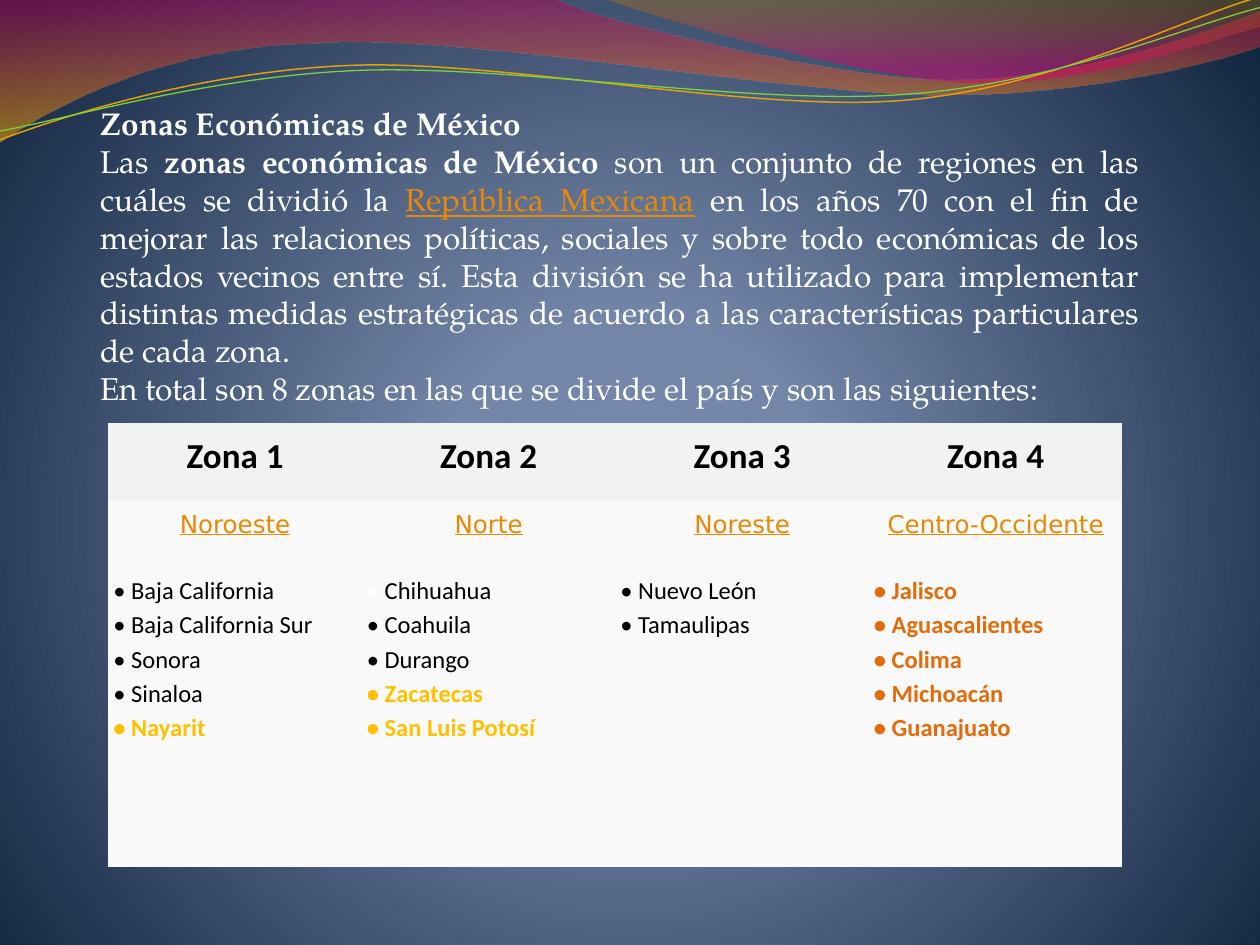
from lxml import etree
from pptx import Presentation
from pptx.dml.color import RGBColor
from pptx.enum.text import PP_ALIGN
from pptx.oxml.ns import qn
from pptx.util import Inches, Pt

CENTER, JUSTIFY = PP_ALIGN.CENTER, PP_ALIGN.JUSTIFY

WHITE = RGBColor(0xFF, 0xFF, 0xFF)
BLACK = RGBColor(0, 0, 0)
LINK = RGBColor(0xEB, 0x88, 0x03)
AMBER = RGBColor(0xFF, 0xC0, 0x00)
RUST = RGBColor(0xE3, 0x6C, 0x0A)
PALE = RGBColor(0xF9, 0xF9, 0xF9)
GREY = RGBColor(0xF2, 0xF2, 0xF2)
GOLD = RGBColor(0xE0, 0xA2, 0x09)
GREEN = RGBColor(0x7F, 0xD1, 0x3B)
PINK = RGBColor(0xBD, 0x00, 0x59)
ROSE = RGBColor(0xE1, 0x00, 0x6B)
ORANGE = RGBColor(0xF0, 0xAB, 0x00)
BROWN = RGBColor(0xC3, 0x8B, 0x00)
SKY = RGBColor(0x76, 0x8B, 0xB1)
STEEL = RGBColor(0x73, 0x86, 0xA7)
NAVY = RGBColor(0x12, 0x25, 0x41)

SERIF, SANS, WIDE = "TeX Gyre Pagella", "Calibri", "DejaVu Sans"
NO_GRID = "{2D5ABB26-0587-4C30-8999-92F81FD0307C}"

BANDS = [
    ([(0, 0), (4.4, -0.01),
      (4.76, 0.17, 6.64, 0.63, 7.58, 0.63), (8.53, 0.63, 9.58, 0.26, 10, 0.09),
      (10.01, 0.36),
      (9.83, 0.44, 8.7, 0.76, 7.46, 0.75), (6.22, 0.75, 3.82, 0.28, 2.57, 0.34),
      (1.29, 0.36, 0.46, 0.83, -0.01, 1.13), (0, 0)],
     [(0, PINK, 45), (100, ORANGE, 55)]),
    ([(4.79, -0.01),
      (5.09, 0.11, 6.82, 0.62, 7.69, 0.65), (8.56, 0.69, 9.61, 0.32, 10, 0.21),
      (10, 0), (4.79, -0.01)],
     [(0, BROWN, 30), (80, ROSE, 45)]),
]
WAVES = [
    ([(0, 1.11), (0.48, 0.93, 1.58, 0.57, 2.77, 0.52),
      (3.95, 0.47, 5.93, 0.89, 7.13, 0.8), (8.33, 0.71, 9.38, 0.15, 9.98, -0.02)],
     GOLD, 0.85),
    ([(0, 1.04), (0.47, 0.96, 1.64, 0.61, 2.83, 0.56),
      (4.03, 0.51, 5.97, 0.84, 7.17, 0.75), (8.36, 0.67, 9.41, 0.21, 10, 0.06)],
     GREEN, 0.75),
]
INTRO = [
    (None, [("Zonas Económicas de México", WHITE, True)]),
    (JUSTIFY, [
        ("Las ", WHITE, False),
        ("zonas económicas de México", WHITE, True),
        (" son un conjunto de regiones en las cuáles se dividió la ", WHITE, False),
        ("República Mexicana", LINK, False),
        (" en los años 70 con el fin de mejorar las relaciones políticas, "
         "sociales y sobre todo económicas de los estados vecinos entre sí. "
         "Esta división se ha utilizado para implementar distintas medidas "
         "estratégicas de acuerdo a las características particulares de cada "
         "zona.", WHITE, False)]),
    (None, [("En total son 8 zonas en las que se divide el país y son las "
             "siguientes:", WHITE, False)]),
]
ZONES = [
    ("Zona 1", "Noroeste",
     [("• Baja California\n• Baja California Sur\n• Sonora\n• Sinaloa\n", BLACK, False),
      ("• Nayarit", AMBER, True)]),
    ("Zona 2", "Norte",
     [("• ", WHITE, False), ("Chihuahua\n• Coahuila\n• Durango\n", BLACK, False),
      ("• Zacatecas\n• San Luis Potosí", AMBER, True)]),
    ("Zona 3", "Noreste", [("• Nuevo León\n• Tamaulipas", BLACK, False)]),
    ("Zona 4", "Centro-Occidente",
     [("• Jalisco\n• Aguascalientes\n• Colima\n• Michoacán\n• Guanajuato", RUST, True)]),
]


def set_grad(fill, root, stops, shade):
    fill.gradient()
    grad = root.xpath(".//a:gradFill")[0]
    for child in list(grad):
        grad.remove(child)
    group = etree.SubElement(grad, qn("a:gsLst"))
    for pos, color, alpha in stops:
        stop = etree.SubElement(group, qn("a:gs"), pos=str(pos * 1000))
        tint = etree.SubElement(stop, qn("a:srgbClr"), val=str(color))
        if alpha < 100:
            etree.SubElement(tint, qn("a:alpha"), val=str(alpha * 1000))
    grad.append(shade)


def paint_back(slide):
    shade = etree.Element(qn("a:path"), {"path": "circle"})
    etree.SubElement(shade, qn("a:fillToRect"),
                     l="10000", t="110000", r="10000", b="100000")
    stops = [(0, SKY, 100), (25, STEEL, 100), (100, NAVY, 100)]
    set_grad(slide.background.fill, slide._element, stops, shade)


def draw_path(slide, path, left, top, close):
    rows = [[(left + Inches(x), top + Inches(y))
             for x, y in zip(part[::2], part[1::2])] for part in path]
    pen = slide.shapes.build_freeform(*rows[0][0])
    pen.add_line_segments([row[-1] for row in rows[1:]], close=close)
    shape = pen.convert_to_shape()
    shape.shadow.inherit = False
    for line, row in zip(shape._element.xpath(".//a:lnTo"), rows[1:]):
        if len(row) == 3:
            curve = etree.Element(qn("a:cubicBezTo"))
            for x, y in row:
                etree.SubElement(curve, qn("a:pt"),
                                 x=str(x - shape.left), y=str(y - shape.top))
            line.getparent().replace(line, curve)
    return shape


def add_waves(slide, left, top):
    for path, stops in BANDS:
        band = draw_path(slide, path, left, top, True)
        band.line.fill.background()
        shade = etree.Element(qn("a:lin"), ang="5400000", scaled="1")
        set_grad(band.fill, band._element, stops, shade)
    for path, color, width in WAVES:
        wave = draw_path(slide, path, left, top, False)
        wave.fill.background()
        wave.line.color.rgb = color
        wave.line.width = Pt(width)


def add_runs(para, runs):
    for text, color, bold in runs:
        for index, line in enumerate(text.split("\n")):
            if index:
                para.add_line_break()
            if line:
                run = para.add_run()
                run.text = line
                run.font.color.rgb = color
                run.font.bold = bold
                if color == LINK:
                    run.font.underline = True


def add_intro(slide, left, top, width, height):
    frame = slide.shapes.add_textbox(left, top, width, height).text_frame
    frame.word_wrap = True
    for index, (align, runs) in enumerate(INTRO):
        para = frame.add_paragraph() if index else frame.paragraphs[0]
        para.alignment = align
        para.font.name, para.font.size = SERIF, Pt(18)
        add_runs(para, runs)


def fill_cell(cell, runs, font, size, align, fill):
    cell.fill.solid()
    cell.fill.fore_color.rgb = fill
    cell.margin_left = cell.margin_right = Inches(0.04)
    cell.margin_top = cell.margin_bottom = Inches(0.04)
    para = cell.text_frame.paragraphs[0]
    para.alignment = align
    para.line_spacing = 1.15
    para.space_before = para.space_after = Pt(12)
    para.font.name, para.font.size = font, Pt(size)
    add_runs(para, runs)


def add_zones(slide, left, top, width, height):
    frame = slide.shapes.add_table(3, len(ZONES), left, top, width, height)
    frame._element.xpath(".//a:tableStyleId")[0].text = NO_GRID
    table = frame.table
    table.first_row = table.horz_banding = False
    for row, size in zip(table.rows, (0.62, 0.52, 2.38)):
        row.height = Inches(size)
    for col, (name, area, states) in enumerate(ZONES):
        fill_cell(table.cell(0, col), [(name, BLACK, True)], SANS, 20, CENTER, GREY)
        fill_cell(table.cell(1, col), [(area, LINK, False)], WIDE, 14, CENTER, PALE)
        fill_cell(table.cell(2, col), states, SANS, 14, None, PALE)


def main():
    deck = Presentation()
    deck.slide_width, deck.slide_height = Inches(10), Inches(7.5)
    slide = deck.slides.add_slide(deck.slide_layouts[6])
    paint_back(slide)
    add_waves(slide, Inches(0), Inches(0))
    add_intro(slide, Inches(0.7), Inches(0.78), Inches(8.44), Inches(2.52))
    add_zones(slide, Inches(0.86), Inches(3.36), Inches(8.05), Inches(3.52))
    deck.save("out.pptx")


if __name__ == "__main__":
    main()
